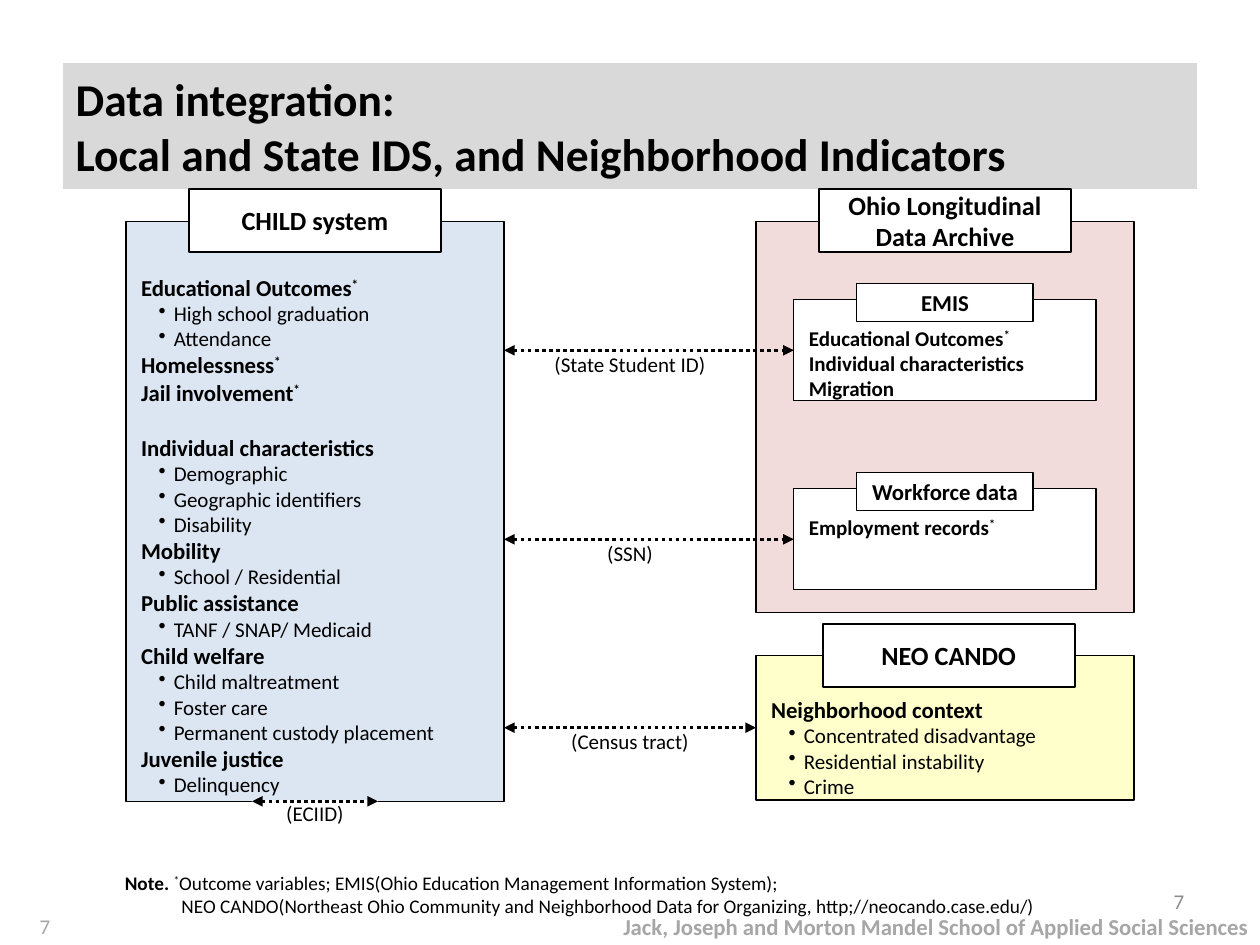
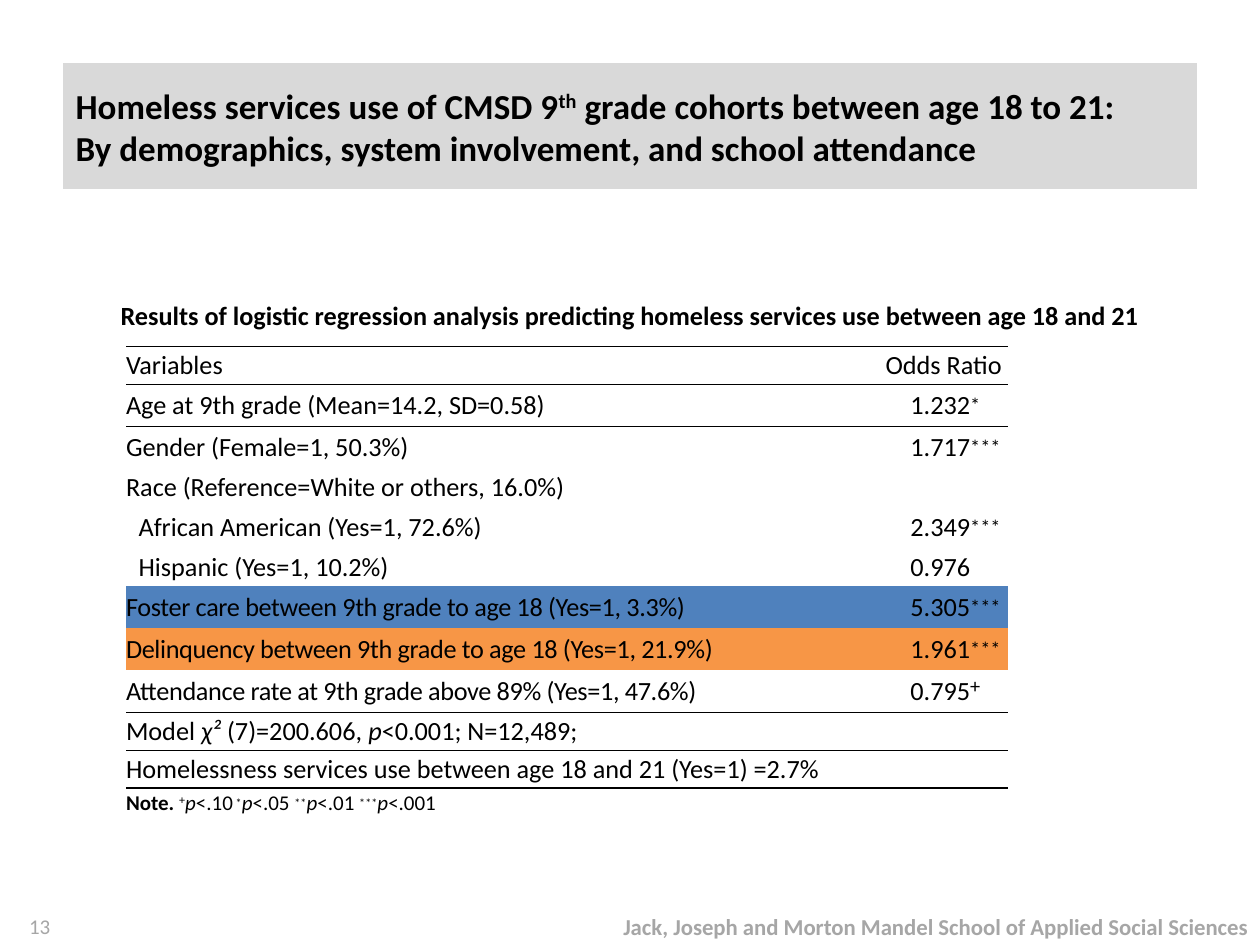
from lxml import etree
from pptx import Presentation
from pptx.dml.color import RGBColor
from pptx.enum.dml import MSO_LINE
from pptx.enum.shapes import MSO_CONNECTOR, MSO_SHAPE
from pptx.enum.text import MSO_ANCHOR, MSO_AUTO_SIZE, PP_ALIGN
from pptx.oxml.ns import qn
from pptx.util import Inches, Pt

LEFT, CENTER, RIGHT = PP_ALIGN.LEFT, PP_ALIGN.CENTER, PP_ALIGN.RIGHT
TOP, MIDDLE = MSO_ANCHOR.TOP, MSO_ANCHOR.MIDDLE
RECT, STRAIGHT = MSO_SHAPE.RECTANGLE, MSO_CONNECTOR.STRAIGHT
DOTS, FIXED = MSO_LINE.ROUND_DOT, MSO_AUTO_SIZE.NONE
FONT = "Calibri"
BLACK, WHITE, BAND, GREY, DIM = "000000", "FFFFFF", "D9D9D9", "A6A6A6", "8C8C8C"
BLUE, PINK, CREAM = "DCE6F2", "F2DCDB", "FFFFCC"
FOSTER, DELINQ = "4F81BD", "F79646"
NO_STYLE = "{2D5ABB26-0587-4C30-8999-92F81FD0307C}"
rgb = RGBColor.from_string


def write(frame, lines, size, align=LEFT, bold=False, color=BLACK, pad=0, spc=0):
    """Runs split at |; a first mark sets ^ or ~ raised, _ italic, # bold.
    A line that starts with • becomes a plain 12 pt bullet."""
    for i, line in enumerate(lines):
        para = frame.paragraphs[0] if i == 0 else frame.add_paragraph()
        para.alignment = align
        props = para._p.get_or_add_pPr()
        item = line.startswith("•")
        if item:
            line = line[1:]
            props.set("marL", str(Inches(0.38)))
            props.set("indent", str(Inches(-0.12)))
            etree.SubElement(props, qn("a:buChar")).set("char", "•")
        elif pad:
            props.set("marL", "0")
            props.set("indent", str(Inches(pad)))
        for piece in line.split("|"):
            mark = piece[:1] if piece[:1] in ("^", "~", "_", "#") else ""
            run = para.add_run()
            run.text = piece[len(mark):]
            look = {"name": FONT, "size": Pt(12 if item else size),
                    "bold": mark == "#" or (bold and not item), "italic": mark == "_"}
            for key, val in look.items():
                setattr(run.font, key, val)
            run.font.color.rgb = rgb(color)
            rise = {"^": "30000", "~": "15000"}.get(mark)
            if rise:
                run.font._element.set("baseline", rise)
            if spc:
                run.font._element.set("spc", str(spc))


def box(slide, at, lines=(), size=12, fill=None, edge=0, anchor=MIDDLE, inset=0, **look):
    """Rectangle, or a plain text box when it has no fill."""
    spot = [Inches(n) for n in at]
    if fill:
        shape = slide.shapes.add_shape(RECT, *spot)
        shape.shadow.inherit = False
        shape.fill.solid()
        shape.fill.fore_color.rgb = rgb(fill)
        if edge:
            shape.line.color.rgb = rgb(BLACK)
            shape.line.width = Pt(edge)
        else:
            shape.line.fill.background()
    else:
        shape = slide.shapes.add_textbox(*spot)
    frame = shape.text_frame
    setup = {"word_wrap": True, "vertical_anchor": anchor, "margin_left": 0,
             "margin_right": 0, "margin_top": Inches(inset), "margin_bottom": 0}
    for key, val in setup.items():
        setattr(frame, key, val)
    write(frame, lines, size, **look)
    return shape


prs = Presentation()
prs.slide_width, prs.slide_height = Inches(10), Inches(7.5)

# Title band and footer
heads = [
    ("7", 26, ["Data integration: ", "Local and State IDS, and Neighborhood Indicators"]),
    ("13", 20, ["Homeless services use of CMSD 9|^th| grade cohorts between age 18 to 21:",
                "By demographics, system involvement, and school attendance"]),
]
slides = []
for num, size, lines in heads:
    slide = prs.slides.add_slide(prs.slide_layouts[5])
    title = slide.shapes.title
    title.left, title.top, title.width, title.height = map(Inches, (0.5, 0.5, 9, 1))
    title.fill.solid()
    title.fill.fore_color.rgb = rgb(BAND)
    title.text_frame.auto_size = FIXED
    title.text_frame.vertical_anchor = MIDDLE
    write(title.text_frame, lines, size, bold=True)
    box(slide, (4, 7.2, 5.9, 0.3),
        ["Jack, Joseph and Morton Mandel School of Applied Social Sciences"],
        13, align=RIGHT, bold=True, color=GREY)
    box(slide, (0, 7.2, 0.4, 0.3), [num], 12, align=RIGHT, color=GREY)
    slides.append(slide)
flow, odds = slides

# Data systems
child_lines = [
    "Educational Outcomes|^*", "•High school graduation", "•Attendance",
    "Homelessness|^*", "Jail involvement|^*",
    "Individual characteristics", "•Demographic", "•Geographic identifiers", "•Disability",
    "Mobility", "•School / Residential",
    "Public assistance", "•TANF / SNAP/ Medicaid",
    "Child welfare", "•Child maltreatment", "•Foster care", "•Permanent custody placement",
    "Juvenile justice", "•Delinquency",
]
neo_lines = ["Neighborhood context", "•Concentrated disadvantage",
             "•Residential instability", "•Crime"]
emis_lines = ["Educational Outcomes|^*", "Individual characteristics", "Migration"]
panels = [
    ((6, 1.76, 3, 3.1), PINK, [], 12, 0),
    ((1, 1.76, 3, 4.6), BLUE, child_lines, 13, 0.41),
    ((6, 5.2, 3, 1.15), CREAM, neo_lines, 13, 0.32),
    ((6.3, 2.38, 2.4, 0.8), WHITE, emis_lines, 12, 0.2),
    ((6.3, 3.88, 2.4, 0.8), WHITE, ["Employment records|^*"], 12, 0.2),
]
arch, child, neo, emis, work = [
    box(flow, at, lines, size, fill, 0.75, TOP, inset, bold=True, pad=0.12)
    for at, fill, lines, size, inset in panels]
child.text_frame.paragraphs[5].space_before = Pt(15.9)

tabs = [
    ((1.5, 1.5, 2, 0.5), ["CHILD system"], 15, 1.25),
    ((6.5, 1.5, 2, 0.5), ["Ohio Longitudinal", "Data Archive"], 15, 1.25),
    ((6.53, 4.95, 2, 0.5), ["NEO CANDO"], 15, 1.25),
    ((6.8, 2.25, 1.4, 0.3), ["EMIS"], 13, 0.75),
    ((6.8, 3.75, 1.4, 0.3), ["Workforce data"], 13, 0.75),
]
for at, lines, size, edge in tabs:
    box(flow, at, lines, size, WHITE, edge, align=CENTER, bold=True)

# Linking keys
box(flow, (2, 6.35, 1, 0.2), ["(ECIID)"], fill=WHITE, align=CENTER)
links = [(2, 3, 6.36, None)]
for goal, key in [(emis, "(State Student ID)"), (work, "(SSN)"), (neo, "(Census tract)")]:
    mid = (goal.top + goal.height / 2) / Inches(1)
    box(flow, (4.02, mid, 1.96, 0.22), [key], align=CENTER)
    links.append((4, goal.left / Inches(1), mid, goal))
for start, stop, y, goal in links:
    link = flow.shapes.add_connector(STRAIGHT, *map(Inches, (start, y, stop, y)))
    if goal is not None:
        link.end_connect(goal, 1)
    link.line.color.rgb = rgb(BLACK)
    link.line.width = Pt(2)
    link.line.dash_style = DOTS
    for end in ("a:headEnd", "a:tailEnd"):
        etree.SubElement(link.line._get_or_add_ln(), qn(end)).set("type", "triangle")
    etree.SubElement(link._element.spPr, qn("a:effectLst"))

box(flow, (7.17, 6.95, 2.23, 0.4), ["7"], 12, align=RIGHT, color=DIM)
note = box(flow, (0.99, 6.95, 7.98, 0.3), [
    "#Note. |^*|Outcome variables; EMIS(Ohio Education Management Information System);",
    "NEO CANDO(Northeast Ohio Community and Neighborhood Data for Organizing, "
    "http;//neocando.case.edu/)"], 11, WHITE)
note.text_frame.paragraphs[1]._p.get_or_add_pPr().set("indent", str(Inches(0.45)))

# Odds ratio table
box(odds, (0.7, 2.25, 8.6, 0.5),
    ["Results of logistic regression analysis predicting homeless services use "
     "between age 18 and 21"], 15, WHITE, align=CENTER, bold=True)
rows = [
    ("Variables", "Odds Ratio", ""),
    ("Age at 9th grade (Mean=14.2, SD=0.58)", "1.232", "~*"),
    ("Gender (Female=1, 50.3%)", "1.717", "~***"),
    ("Race (Reference=White or others, 16.0%)", "", ""),
    ("African American (Yes=1, 72.6%)", "2.349", "~***"),
    ("Hispanic (Yes=1, 10.2%)", "0.976", ""),
    ("Foster care between 9th grade to age 18 (Yes=1, 3.3%)", "5.305", "~***"),
    ("Delinquency between 9th grade to age 18 (Yes=1, 21.9%)", "1.961", "~***"),
    ("Attendance rate at 9th grade above 89% (Yes=1, 47.6%)", "0.795", "^+"),
    ("Model |_χ² |(7)=200.606, |_p|<0.001; N=12,489;", "", ""),
    ("Homelessness services use between age 18 and 21 (Yes=1) =2.7%", "", ""),
    ("#Note. |^+|_p|<.10|~ *|_p|<.05 |~**|_p|<.01 |~***|_p|<.001", "", ""),
]
last = len(rows) - 1
fills = {6: FOSTER, 7: DELINQ}
ruled = (0, 1, 9, 11)  # rows with a line above
table = odds.shapes.add_table(len(rows), 3, *map(Inches, (1, 2.75, 7, 3.71))).table
table._tbl.tblPr.find(qn("a:tableStyleId")).text = NO_STYLE
table.first_row = table.horz_banding = False
for col, wide in zip(table.columns, (5, 1.7, 0.3)):
    col.width = Inches(wide)
for r, row in enumerate(rows):
    table.rows[r].height = Inches(0.25 if r == last else 0.33 if row[2] else 0.3)
    for c, text in enumerate(row):
        cell = table.cell(r, c)
        cell.vertical_anchor = MIDDLE
        for side in ("left", "right", "top", "bottom"):
            setattr(cell, "margin_" + side, 0)
        if text:
            size = 12 if r == last else 20 if c == 2 else 15
            write(cell.text_frame, [text], size, RIGHT if c == 1 else LEFT,
                  spc=-20 if c == 0 and r in (6, 7, 8) else 0)
        if r in fills:
            cell.fill.solid()
            cell.fill.fore_color.rgb = rgb(fills[r])
        else:
            cell.fill.background()
        edges = [tag for tag, at in (("a:lnT", r), ("a:lnB", r + 1)) if at in ruled]
        for i, tag in enumerate(edges):
            line = etree.Element(qn(tag), w=str(Pt(1)))
            ink = etree.SubElement(line, qn("a:solidFill"))
            etree.SubElement(ink, qn("a:srgbClr")).set("val", BLACK)
            cell._tc.get_or_add_tcPr().insert(i, line)
table.cell(0, 1).margin_right = Inches(0.05)
for r in (4, 5):
    table.cell(r, 0).margin_left = Inches(0.1)
for r, c in ((0, 1), (9, 1), (10, 0), (11, 0)):
    table.cell(r, c).merge(table.cell(r, 2))

prs.save("out.pptx")
